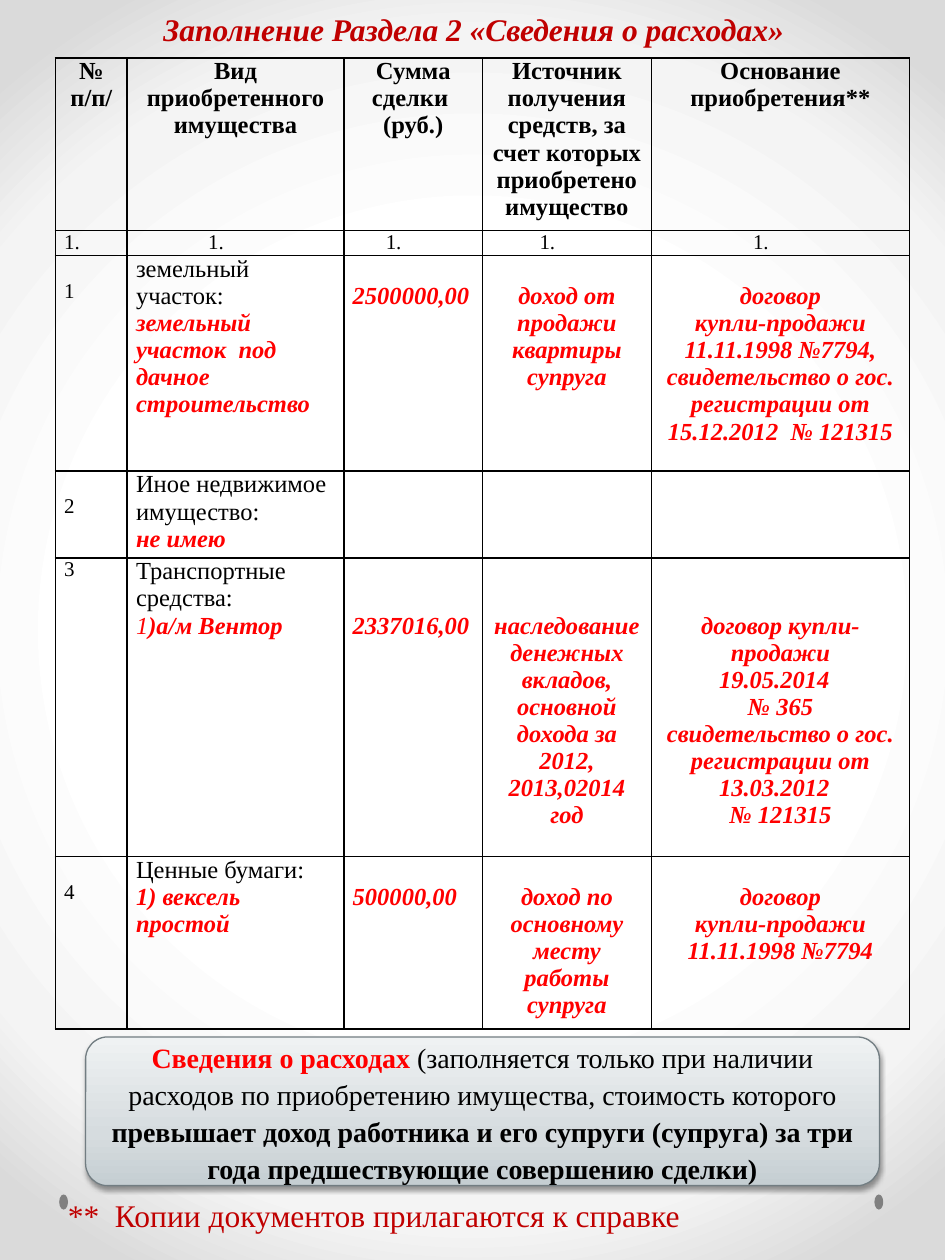
from dataclasses import dataclass

from pptx import Presentation
from pptx.dml.color import RGBColor
from pptx.enum.shapes import MSO_SHAPE
from pptx.enum.text import MSO_ANCHOR, PP_ALIGN
from pptx.oxml import parse_xml
from pptx.oxml.ns import nsdecls
from pptx.util import Inches, Pt

INK = {"black": "000000", "red": "FF0000", "dark": "C00000",
       "dot": "808080", "edge": "727D82"}
FONT = "Times New Roman"
LEFT, MID = PP_ALIGN.LEFT, PP_ALIGN.CENTER
WIDTHS = [0.57, 1.72, 1.1, 1.34, 2.05]
HEIGHTS = [1.37, 0.2, 1.71, 0.69, 2.37, 1.37]
LINE = 0.215


@dataclass
class Item:
    num: str
    kind: str
    asset: list[tuple[str, bool]]
    sum: str = ""
    source: str = ""
    basis: str = ""
    drop: int = 1
    low: float = 0.19


HEADS = ["№ п/п/", "Вид приобретенного имущества", "Сумма сделки \n(руб.)",
         "Источник получения средств, за счет которых приобретено имущество",
         "Основание приобретения**"]
ITEMS = [
    Item("1", "земельный участок:",
         [("земельный участок  под дачное строительство", True)],
         "2500000,00", "доход от продажи квартиры супруга",
         "договор\nкупли-продажи\n11.11.1998 №7794, свидетельство о гос. "
         "регистрации от 15.12.2012  № 121315"),
    Item("2", "Иное недвижимое имущество:", [("не имею", True)]),
    Item("3", "Транспортные средства:", [("1", False), (")а/м Вентор", True)],
         "2337016,00",
         "наследование денежных вкладов, основной дохода за 2012, 2013,02014 год",
         "договор купли-продажи\n19.05.2014  \n№ 365\nсвидетельство о гос. "
         "регистрации от 13.03.2012  \n№ 121315", drop=2, low=0),
    Item("4", "Ценные бумаги:", [("1) вексель простой", True)],
         "500000,00", "доход по основному месту работы супруга",
         "договор\nкупли-продажи\n11.11.1998 №7794"),
]


def tint(name: str) -> RGBColor:
    return RGBColor.from_string(INK[name])


def say(frame, text: str, *, size=14, color="black", bold=False, ital=False,
        align=LEFT, lead=1.0, join=False) -> None:
    for line in text.split("\n"):
        para = frame.paragraphs[-1]
        if para.runs and not join:
            para = frame.add_paragraph()
        para.alignment = align
        para.line_spacing = lead
        para.space_before = para.space_after = Pt(0)
        run = para.add_run()
        run.text = line
        font = run.font
        font.name, font.size = FONT, Pt(size)
        font.bold, font.italic = bold, ital
        font.color.rgb = tint(color)


def blend(stops: list[tuple[int, str]], shade: str):
    marks = "".join(f'<a:gs pos="{pos * 1000}"><a:srgbClr val="{hue}"/></a:gs>'
                    for pos, hue in stops)
    return parse_xml(f'<a:gradFill {nsdecls("a")} rotWithShape="1">'
                     f"<a:gsLst>{marks}</a:gsLst>{shade}</a:gradFill>")


def paint(slide) -> None:
    slide.background.fill.solid()
    solid = slide.background.fill._xPr
    solid.replace(solid[0], blend(
        [(50, "FFFFFF"), (76, "F4F4F4"), (92, "DADADA")],
        '<a:path path="circle"><a:fillToRect l="50000" t="50000" '
        'r="50000" b="50000"/></a:path>'))


def frame_cell(cell) -> None:
    cell.fill.background()
    cell.margin_left = cell.margin_right = Inches(0.07)
    cell.margin_top = cell.margin_bottom = 0
    props = cell._tc.get_or_add_tcPr()
    for spot, side in enumerate("LRTB"):
        props.insert(spot, parse_xml(
            f'<a:ln{side} {nsdecls("a")} w="12700"><a:solidFill>'
            f'<a:srgbClr val="{INK["black"]}"/></a:solidFill></a:ln{side}>'))


def fill_row(cells, item: Item) -> None:
    num, kind, *rest = cells
    num.margin_top = Inches(item.low)
    say(num.text_frame, item.num, size=12)
    say(kind.text_frame, item.kind)
    for spot, (text, bold) in enumerate(item.asset):
        say(kind.text_frame, text, color="red", bold=bold, ital=True, join=spot > 0)
    for cell, text, align in zip(rest, (item.sum, item.source, item.basis),
                                 (LEFT, MID, MID)):
        if text:
            cell.margin_top = Inches(LINE * item.drop)
            say(cell.text_frame, text, color="red", bold=True, ital=True, align=align)


def draw_table(slide) -> None:
    grid = slide.shapes.add_table(
        len(HEIGHTS), len(WIDTHS), Inches(0.44), Inches(0.46),
        Inches(sum(WIDTHS)), Inches(sum(HEIGHTS))).table
    grid.first_row = grid.horz_banding = False
    for col, wide in zip(grid.columns, WIDTHS):
        col.width = Inches(wide)
    for row, high in zip(grid.rows, HEIGHTS):
        row.height = Inches(high)
        for cell in row.cells:
            frame_cell(cell)
    rows = [list(row.cells) for row in grid.rows]
    for cell, text in zip(rows[0], HEADS):
        say(cell.text_frame, text, bold=True, align=MID)
    for spot, cell in enumerate(rows[1]):
        if spot:
            cell.margin_right = Inches(0.38)
        say(cell.text_frame, "1.", size=12, align=MID if spot else LEFT)
    for cells, item in zip(rows[2:], ITEMS):
        fill_row(cells, item)


def draw_dot(slide, left: float) -> None:
    dot = slide.shapes.add_shape(MSO_SHAPE.OVAL, Inches(left), Inches(9.48),
                                 Inches(0.07), Inches(0.12))
    dot.shadow.inherit = False
    dot.fill.solid()
    dot.fill.fore_color.rgb = tint("dot")
    dot.line.fill.background()


def draw_box(slide) -> None:
    box = slide.shapes.add_shape(MSO_SHAPE.ROUNDED_RECTANGLE, Inches(0.68),
                                 Inches(8.23), Inches(6.3), Inches(1.18))
    box.adjustments[0] = 0.148
    box.line.color.rgb = tint("edge")
    box.line.width = Pt(0.75)
    box.shadow.inherit = False
    props = box._element.spPr
    props.insert(2, blend([(0, "C5CED2"), (35, "D6DCDF"), (100, "EFF2F3")],
                          '<a:lin ang="16200000" scaled="0"/>'))
    props[-1].append(parse_xml(
        f'<a:outerShdw {nsdecls("a")} blurRad="39400" dist="20300" dir="5400000" '
        'rotWithShape="0"><a:srgbClr val="000000"><a:alpha val="38000"/>'
        "</a:srgbClr></a:outerShdw>"))
    body = box.text_frame
    body.word_wrap = True
    body.vertical_anchor = MSO_ANCHOR.MIDDLE
    parts = [("Сведения о расходах ", "red", True),
             ("(заполняется только при наличии расходов по приобретению имущества, "
              "стоимость которого ", "black", False),
             ("превышает доход работника и его супруги (супруга) за три года "
              "предшествующие совершению сделки)", "black", True)]
    for text, color, bold in parts:
        say(body, text, size=16, color=color, bold=bold, align=MID, lead=1.1, join=True)


def main() -> None:
    deck = Presentation()
    deck.slide_width, deck.slide_height = Inches(7.5), Inches(10)
    slide = deck.slides.add_slide(deck.slide_layouts[5])
    paint(slide)
    for left in (6.94, 0.47):
        draw_dot(slide, left)
    title = slide.shapes.title
    title.left, title.top = Inches(0.57), Inches(-0.28)
    title.width, title.height = Inches(6.38), Inches(0.71)
    title.text_frame.vertical_anchor = MSO_ANCHOR.BOTTOM
    say(title.text_frame, "Заполнение Раздела 2 «Сведения о расходах»", size=18,
        color="dark", bold=True, ital=True, align=MID)
    draw_table(slide)
    draw_box(slide)
    note = slide.shapes.add_textbox(Inches(0.44), Inches(9.41), Inches(6.54), Inches(0.4))
    note.text_frame.word_wrap = True
    say(note.text_frame, "**  Копии документов прилагаются к справке", size=18,
        color="dark", lead=1.1)
    deck.save("out.pptx")


if __name__ == "__main__":
    main()
